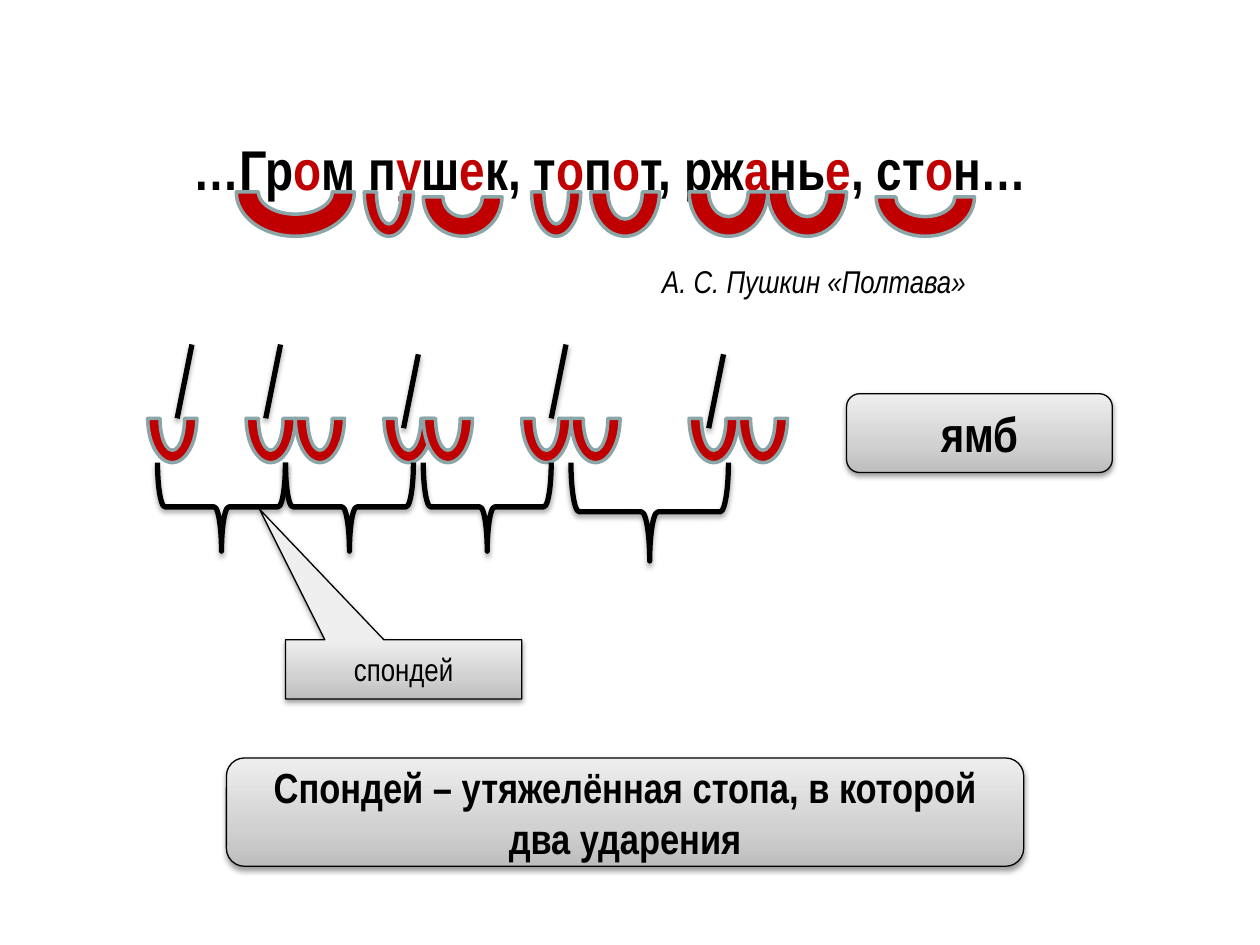
from copy import deepcopy
from lxml import etree
from pptx import Presentation
from pptx import util as u
from pptx.dml.color import RGBColor
from pptx.enum import shapes, text
from pptx.oxml import ns

COLORS = {"black": "000000", "red": "C00000", "rim": "8AA6A8"}
GRADIENT = [(0, "BDBDBD"), (0.35, "D1D1D1"), (1, "EEEEEE")]
FONT = "Arial Narrow"
GRID = 45 / 8

VERSE = ["…Гр", "о", "м п", "у", "ш", "е", "к, т", "о", "п", "о",
         "т, рж", "а", "нь", "е", ", ст", "о", "н…"]
AUTHOR = "А. С. Пушкин «Полтава»"

VERSE_ARCS = [(24, 15, 12, 9), (37, 15, 5, 9), (43, 16, 8, 8), (54, 15, 5, 9),
              (60, 15, 7, 9), (70, 15, 8, 9), (78, 15, 8, 9), (89, 16, 10, 8)]
SCHEME_ARCS = [(left, 38, 5, 9) for left in (15, 25, 30, 39, 43, 53, 58, 70, 75)]
STRESSES = [(19.5, 35), (28.5, 35), (42.5, 36), (57.5, 35), (73.5, 36)]
BRACES = [(18, 45, 9, 13), (31, 45, 9, 13), (45, 45, 9, 13), (61, 44, 10, 16)]

KIND = shapes.MSO_SHAPE
PANELS = [
    (KIND.RECTANGULAR_CALLOUT, (29, 65, 24, 6), "спондей", 18, False),
    (KIND.ROUNDED_RECTANGLE, (86, 40, 27, 8), "ямб", 28, True),
    (KIND.ROUNDED_RECTANGLE, (23, 77, 81, 11),
     "Спондей – утяжелённая стопа, в которой два ударения", 24, True),
]


def grid(*values):
    return [u.Pt(round(value * GRID, 2)) for value in values]


def color(name):
    return RGBColor.from_string(COLORS[name])


def write(shape, runs, size, bold=False, italic=False, centered=True):
    frame = shape.text_frame
    frame.word_wrap = True
    paragraph = frame.paragraphs[0]
    paragraph.alignment = text.PP_ALIGN.CENTER if centered else text.PP_ALIGN.LEFT
    for content, color_name in runs:
        run = paragraph.add_run()
        run.text = content
        font = run.font
        font.name, font.size = FONT, u.Pt(size)
        font.bold, font.italic = bold, italic
        font.color.rgb = color(color_name)


def outline(shape, color_name, width):
    shape.line.color.rgb = color(color_name)
    shape.line.width = u.Pt(width)


def add_shadow(shape, opacity, distance):
    properties = shape.element.spPr
    effects = properties.find(ns.qn("a:effectLst"))
    if effects is None:
        effects = etree.SubElement(properties, ns.qn("a:effectLst"))
    shadow = etree.SubElement(
        effects, ns.qn("a:outerShdw"), blurRad=str(u.Pt(3.1)),
        dist=str(u.Pt(distance)), dir="5400000", rotWithShape="0")
    shade = etree.SubElement(shadow, ns.qn("a:srgbClr"), val=COLORS["black"])
    etree.SubElement(shade, ns.qn("a:alpha"), val=str(opacity * 1000))


def fill_gradient(shape):
    shape.fill.gradient()
    shape.fill.gradient_angle = 90
    stops = shape.element.spPr.find(ns.qn("a:gradFill")).find(ns.qn("a:gsLst"))
    stops.append(deepcopy(stops[0]))
    for stop, (position, value) in zip(shape.fill.gradient_stops, GRADIENT):
        stop.position = position
        stop.color.rgb = RGBColor.from_string(value)


def add_shape(slide, kind, box, rotation=0):
    shape = slide.shapes.add_shape(kind, *grid(*box))
    shape.rotation = rotation
    shape.shadow.inherit = False
    return shape


def main():
    presentation = Presentation()
    presentation.slide_width, presentation.slide_height = u.Pt(720), u.Pt(540)
    slide = presentation.slides.add_slide(presentation.slide_layouts[6])

    verse = slide.shapes.add_textbox(*grid(15, 13, 94), u.Pt(46))
    write(verse, [(part, "red" if index % 2 else "black")
                  for index, part in enumerate(VERSE)], size=32, bold=True)
    author = slide.shapes.add_textbox(*grid(66, 26, 49), u.Pt(29))
    write(author, [(AUTHOR, "black")], size=18, italic=True, centered=False)

    for box in VERSE_ARCS + SCHEME_ARCS:
        arc = add_shape(slide, KIND.BLOCK_ARC, box, rotation=180)
        arc.fill.solid()
        arc.fill.fore_color.rgb = color("red")
        outline(arc, "rim", 2)

    for left, top in STRESSES:
        stress = slide.shapes.add_connector(
            shapes.MSO_CONNECTOR.STRAIGHT, *grid(left, top, left - 1.5, top + 7.5))
        outline(stress, "black", 3)
        add_shadow(stress, opacity=35, distance=1.8)

    for box in BRACES:
        brace = add_shape(slide, KIND.RIGHT_BRACE, box, rotation=90)
        brace.fill.background()
        outline(brace, "black", 3)
        add_shadow(brace, opacity=35, distance=1.8)

    for kind, box, content, size, bold in PANELS:
        panel = add_shape(slide, kind, box)
        if kind == KIND.RECTANGULAR_CALLOUT:
            panel.adjustments[0], panel.adjustments[1] = -0.61, -2.71
        fill_gradient(panel)
        outline(panel, "black", 0.75)
        add_shadow(panel, opacity=38, distance=1.6)
        panel.text_frame.vertical_anchor = text.MSO_ANCHOR.MIDDLE
        write(panel, [(content, "black")], size=size, bold=bold)

    presentation.save("out.pptx")


if __name__ == "__main__":
    main()
